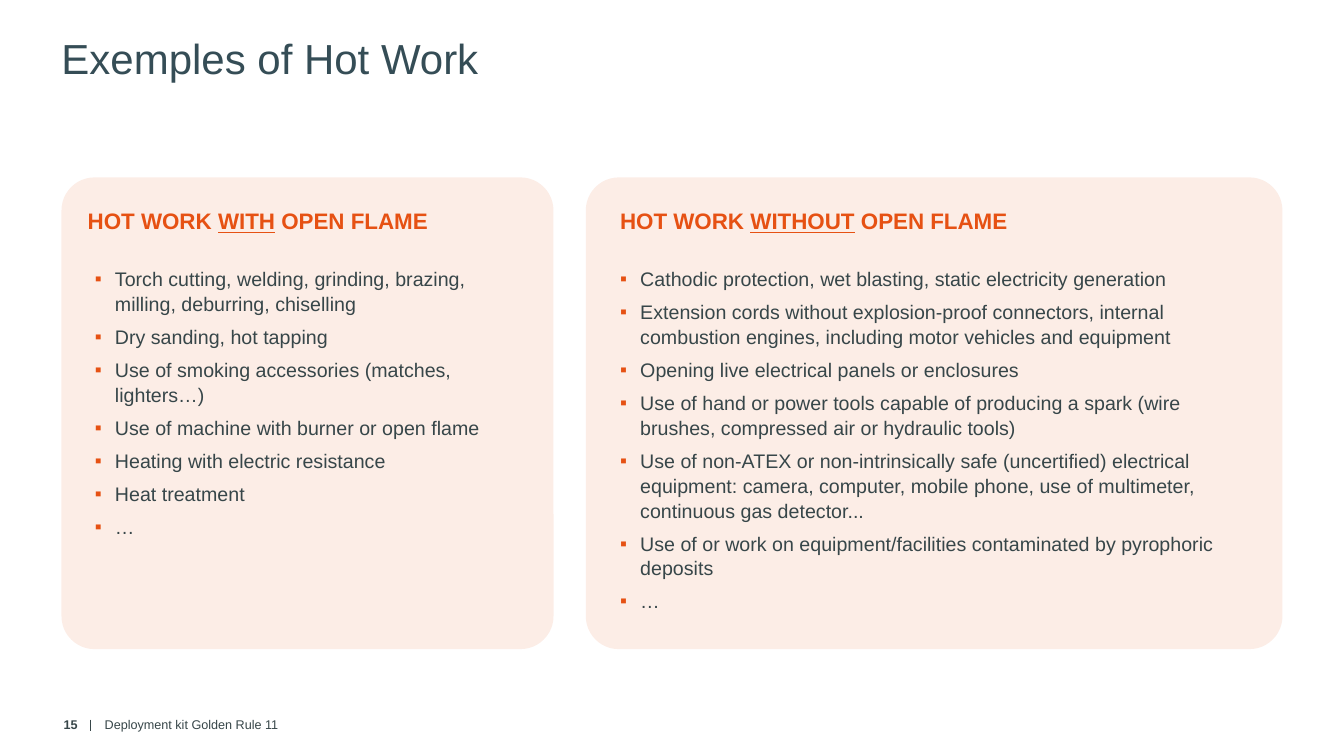
"""Build the slide that lists examples of hot work."""
from lxml.etree import SubElement
from pptx import Presentation
from pptx.dml.color import RGBColor
from pptx.enum.shapes import MSO_CONNECTOR, MSO_SHAPE
from pptx.enum.text import MSO_ANCHOR, MSO_AUTO_SIZE, PP_ALIGN
from pptx.oxml.ns import qn
from pptx.util import Pt

PX = 9144
ORANGE = RGBColor(0xE6, 0x51, 0x13)
SLATE = RGBColor(0x37, 0x46, 0x49)
TITLE_BLUE = RGBColor(0x35, 0x4D, 0x56)

TITLE = "Exemples of Hot Work"
FOOTER = "Deployment kit Golden Rule 11"
PAGE_NUMBER = "15"
PANELS = [
    {
        "panel": (61, 488), "heading": (87, 341), "list": (94, 424), "word": "WITH",
        "items": [
            "Torch cutting, welding, grinding, brazing, milling, deburring, chiselling",
            "Dry sanding, hot tapping",
            "Use of smoking accessories (matches, lighters…)",
            "Use of machine with burner or open flame",
            "Heating with electric resistance",
            "Heat treatment",
            "…",
        ],
    },
    {
        "panel": (581, 691), "heading": (615, 389), "list": (615, 624), "word": "WITHOUT",
        "items": [
            "Cathodic protection, wet blasting, static electricity generation",
            "Extension cords without explosion-proof connectors, internal combustion "
            "engines, including motor vehicles and equipment",
            "Opening live electrical panels or enclosures",
            "Use of hand or power tools capable of producing a spark (wire brushes, "
            "compressed air or hydraulic tools)",
            "Use of non-ATEX or non-intrinsically safe (uncertified) electrical equipment: "
            "camera, computer, mobile phone, use of multimeter, continuous gas detector...",
            "Use of or work on equipment/facilities contaminated by pyrophoric deposits",
            "…",
        ],
    },
]
PANEL_TOP, PANEL_HEIGHT = 176, 468
HEADING_TOP, HEADING_HEIGHT = 206, 27
LIST_TOP, LIST_HEIGHT = 264, 350
FOOTER_TOP, FOOTER_HEIGHT = 705, 28


def scaled(*lengths):
    return [length * PX for length in lengths]


def add_bullet(para):
    properties = para._p.get_or_add_pPr()
    properties.set("marL", str(20 * PX))
    properties.set("indent", str(-20 * PX))
    color = SubElement(properties, qn("a:buClr"))
    SubElement(color, qn("a:srgbClr"), val=str(ORANGE))
    SubElement(properties, qn("a:buFont"), typeface="Arial")
    SubElement(properties, qn("a:buChar"), char="▪")


def write(box, place, paragraphs, size, color, bold=False, align=PP_ALIGN.LEFT,
          anchor=MSO_ANCHOR.TOP, inset=(0, 0), wrap=True, bullets=False, underlined=""):
    box.left, box.top, box.width, box.height = scaled(*place)
    frame = box.text_frame
    frame.auto_size = MSO_AUTO_SIZE.NONE
    frame.word_wrap = wrap
    frame.vertical_anchor = anchor
    frame.margin_left = frame.margin_right = inset[0] * PX
    frame.margin_top = frame.margin_bottom = inset[1] * PX
    for index, spans in enumerate(paragraphs):
        para = frame.add_paragraph() if index else frame.paragraphs[0]
        para.alignment = align
        para.space_before = Pt(0)
        if bullets:
            para.space_after = Pt(6)
            para.line_spacing = 1.05
            add_bullet(para)
        for text in spans:
            span = para.add_run()
            span.text = text
            span.font.name = "Arial"
            span.font.size = Pt(size)
            span.font.bold = bold
            span.font.color.rgb = color
            if text == underlined:
                span.font.underline = True


def add_panel(page, left, width):
    panel = page.shapes.add_shape(
        MSO_SHAPE.ROUNDED_RECTANGLE, *scaled(left, PANEL_TOP, width, PANEL_HEIGHT))
    panel.adjustments[0] = 0.07
    panel.shadow.inherit = False
    panel.line.fill.background()
    panel.fill.solid()
    panel.fill.fore_color.rgb = ORANGE
    tint = next(panel.element.iter(qn("a:srgbClr")))
    SubElement(tint, qn("a:alpha"), val="10000")
    panel.element.getparent().insert(2, panel.element)


def add_footer(page):
    divider = page.shapes.add_connector(MSO_CONNECTOR.STRAIGHT, *scaled(90, 714, 90, 725))
    divider.line.color.rgb = SLATE
    divider.line.width = Pt(1)
    SubElement(divider.element.spPr, qn("a:effectLst"))
    for text, left, width, bold, align in (
            (FOOTER, 94, 394, False, PP_ALIGN.LEFT),
            (PAGE_NUMBER, 24, 63, True, PP_ALIGN.RIGHT)):
        place = (left, FOOTER_TOP, width, FOOTER_HEIGHT)
        write(page.shapes.add_textbox(0, 0, 0, 0), place, [[text]], 9, SLATE, bold=bold,
              align=align, anchor=MSO_ANCHOR.MIDDLE, inset=(10, 5))


def main():
    deck = Presentation()
    deck.slide_width, deck.slide_height = scaled(1333, 750)
    page = deck.slides.add_slide(deck.slide_layouts.get_by_name("Two Content"))
    title, *bodies = page.placeholders
    write(title, (51, 27, 1063, 110), [[TITLE]], 30, TITLE_BLUE, inset=(10, 5))
    for body, part in zip(bodies, PANELS):
        add_panel(page, *part["panel"])
        left, width = part["list"]
        write(body, (left, LIST_TOP, width, LIST_HEIGHT),
              [[item] for item in part["items"]], 14, SLATE, bullets=True)
        left, width = part["heading"]
        write(page.shapes.add_textbox(0, 0, 0, 0), (left, HEADING_TOP, width, HEADING_HEIGHT),
              [["HOT WORK ", part["word"], " OPEN FLAME"]], 16, ORANGE, bold=True,
              wrap=False, underlined=part["word"])
    add_footer(page)
    deck.save("out.pptx")


if __name__ == "__main__":
    main()
